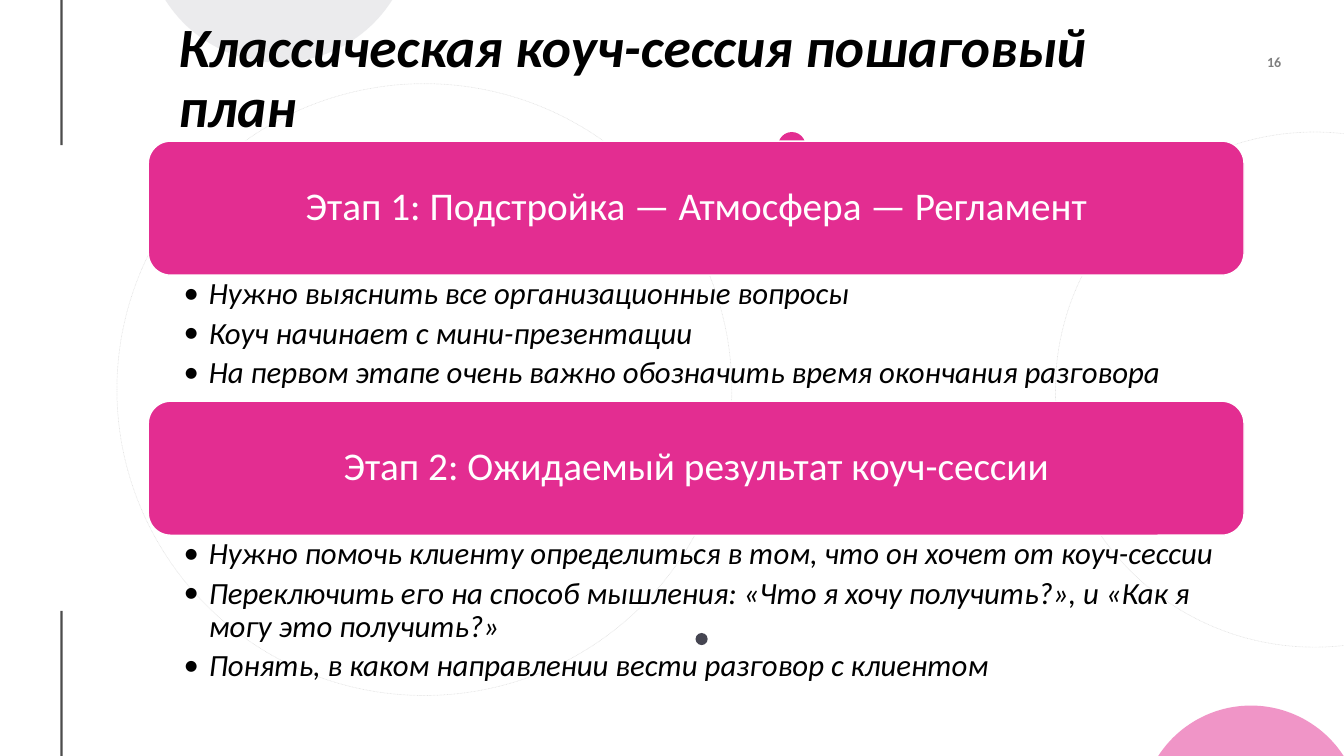
from dataclasses import dataclass
from math import asin, cos, sin

from lxml import etree
from pptx import Presentation
from pptx import util as u
from pptx.dml.color import RGBColor
from pptx.enum import dml, shapes, text
from pptx.oxml import ns

BLACK = RGBColor(0x00, 0x00, 0x00)
WHITE = RGBColor(0xFF, 0xFF, 0xFF)
PINK = RGBColor(0xE3, 0x2D, 0x91)
GREY = RGBColor(0xD8, 0xD9, 0xDC)
SLATE = RGBColor(0x45, 0x45, 0x51)
FONT = "Calibri"
WIDTH, HEIGHT = u.Inches(13.33), u.Inches(7.5)
RAIL_X = 4.58
STEP_LEFT, STEP_WIDTH, STEP_TOP, BAR_HEIGHT = 11.03, 81.53, 18.67, 17.73


@dataclass(frozen=True)
class Box:
    left: float
    top: float
    width: float
    height: float

    def emu(self) -> tuple[int, int, int, int]:
        return x(self.left), y(self.top), x(self.width), y(self.height)


@dataclass(frozen=True)
class Cap:
    center: float
    half_chord: float
    height: float
    edge: float
    direction: int
    color: RGBColor


@dataclass(frozen=True)
class Step:
    heading: str
    points: tuple[str, ...]
    height: float


RINGS = (Box(78.53, 17.47, 38.55, 68.13), Box(8.7, 11.07, 45.75, 80.93))
DOTS = ((Box(51.75, 83.73, 0.9, 1.6), SLATE), (Box(57.9, 17.47, 2.03, 3.6), PINK))
CAPS = (
    Cap(93.08, 6.9, 6.67, 100, -1, PINK),
    Cap(20.74, 8.44, 8.27, 0, 1, GREY),
)
STEPS = (
    Step(
        "Этап 1: Подстройка — Атмосфера — Регламент",
        (
            "Нужно выяснить все организационные вопросы",
            "Коуч начинает с мини-презентации",
            "На первом этапе очень важно обозначить время окончания разговора",
        ),
        16.67,
    ),
    Step(
        "Этап 2: Ожидаемый результат коуч-сессии",
        (
            "Нужно помочь клиенту определиться в том, что он хочет от коуч-сессии",
            "Переключить его на способ мышления: «Что я хочу получить?», и «Как я могу это получить?»",
            "Понять, в каком направлении вести разговор с клиентом",
        ),
        21.07,
    ),
)


def x(share: float) -> int:
    return round(WIDTH * share / 100)


def y(share: float) -> int:
    return round(HEIGHT * share / 100)


def set_alpha(element, percent: int) -> None:
    for color in element.iter(ns.qn("a:srgbClr")):
        etree.SubElement(color, ns.qn("a:alpha")).set("val", str(percent * 1000))


def style(font, size: float, color: RGBColor, bold: bool = False, italic: bool = False) -> None:
    font.name, font.size = FONT, u.Pt(size)
    font.bold, font.italic = bold, italic
    font.color.rgb = color


def set_frame(tf, anchor, left: float, top: float, right: float, bottom: float) -> None:
    tf.word_wrap = True
    tf.auto_size = text.MSO_AUTO_SIZE.NONE
    tf.vertical_anchor = anchor
    tf.margin_left, tf.margin_top = u.Inches(left), u.Inches(top)
    tf.margin_right, tf.margin_bottom = u.Inches(right), u.Inches(bottom)


def fill_plain(sp, color: RGBColor) -> None:
    sp.shadow.inherit = False
    sp.fill.solid()
    sp.fill.fore_color.rgb = color
    sp.line.fill.background()


def add_rail(slide, top: float, bottom: float) -> None:
    line = slide.shapes.add_connector(
        shapes.MSO_CONNECTOR.STRAIGHT, x(RAIL_X), y(top), x(RAIL_X), y(bottom)
    )
    line.line.color.rgb = BLACK
    line.line.width = u.Pt(1.5)
    set_alpha(line.element, 70)
    etree.SubElement(line.element.spPr, ns.qn("a:effectLst"))


def add_ring(slide, box: Box) -> None:
    sp = slide.shapes.add_shape(shapes.MSO_SHAPE.OVAL, *box.emu())
    sp.shadow.inherit = False
    sp.fill.background()
    sp.line.color.rgb = BLACK
    sp.line.width = u.Pt(0.5)
    sp.line.dash_style = dml.MSO_LINE.ROUND_DOT
    set_alpha(sp.element, 10)


def add_dot(slide, box: Box, color: RGBColor) -> None:
    fill_plain(slide.shapes.add_shape(shapes.MSO_SHAPE.OVAL, *box.emu()), color)


def add_cap(slide, cap: Cap, segments: int = 48) -> None:
    half, height = x(cap.half_chord), y(cap.height)
    radius = (half**2 + height**2) / (2 * height)
    reach = asin(half / radius)
    angles = [reach * (2 * i / segments - 1) for i in range(segments + 1)]
    points = [
        (
            round(x(cap.center) + radius * sin(a)),
            round(y(cap.edge) + cap.direction * (radius * cos(a) - radius + height)),
        )
        for a in angles
    ]
    builder = slide.shapes.build_freeform(*points[0])
    builder.add_line_segments(points[1:], close=True)
    sp = builder.convert_to_shape()
    fill_plain(sp, cap.color)
    set_alpha(sp.element, 50)


def add_number(slide) -> None:
    sp = slide.shapes.add_textbox(*Box(89.55, 6.4, 5.78, 3.6).emu())
    set_frame(sp.text_frame, text.MSO_ANCHOR.MIDDLE, 0, 0, 0, 0)
    p = sp.text_frame.paragraphs[0]
    p.text = "16"
    p.alignment = text.PP_ALIGN.RIGHT
    style(p.font, 10, BLACK, bold=True)
    set_alpha(sp.element, 50)


def add_title(slide) -> None:
    sp = slide.shapes.title
    slide.shapes.element.append(sp.element)
    sp.left, sp.top, sp.width, sp.height = Box(12.53, 7.73, 78.75, 5.47).emu()
    set_frame(sp.text_frame, text.MSO_ANCHOR.MIDDLE, 0.1, 0.05, 0.1, 0.05)
    p = sp.text_frame.paragraphs[0]
    p.text = "Классическая коуч-сессия пошаговый план"
    p.alignment = text.PP_ALIGN.LEFT
    p.line_spacing = 0.9
    style(p.font, 39.6, BLACK, bold=True, italic=True)


def add_step(slide, step: Step, top: float) -> None:
    bar = slide.shapes.add_shape(
        shapes.MSO_SHAPE.ROUNDED_RECTANGLE, *Box(STEP_LEFT, top, STEP_WIDTH, BAR_HEIGHT).emu()
    )
    fill_plain(bar, PINK)
    bar.line.color.rgb = WHITE
    bar.line.width = u.Pt(1)
    set_frame(bar.text_frame, text.MSO_ANCHOR.MIDDLE, 0.12, 0.12, 0.12, 0.12)
    p = bar.text_frame.paragraphs[0]
    p.text = step.heading
    p.alignment = text.PP_ALIGN.CENTER
    p.line_spacing = 0.9
    style(p.font, 28, WHITE)

    body = Box(STEP_LEFT, top + BAR_HEIGHT, STEP_WIDTH, step.height)
    tf = slide.shapes.add_textbox(*body.emu()).text_frame
    set_frame(tf, text.MSO_ANCHOR.TOP, 0.35, 0.03, 0.17, 0.03)
    for i, point in enumerate(step.points):
        p = tf.add_paragraph() if i else tf.paragraphs[0]
        p.text = point
        p.line_spacing = 0.9
        p.space_after = u.Pt(4.4)
        props = p._p.get_or_add_pPr()
        props.set("marL", str(u.Inches(0.25)))
        props.set("indent", str(u.Inches(-0.25)))
        etree.SubElement(props, ns.qn("a:buFont")).set("typeface", FONT)
        etree.SubElement(props, ns.qn("a:buChar")).set("char", "•")
        style(p.font, 22, BLACK, italic=True)


def main() -> None:
    prs = Presentation()
    prs.slide_width, prs.slide_height = WIDTH, HEIGHT
    slide = prs.slides.add_slide(prs.slide_layouts[5])
    add_rail(slide, 80.8, 100)
    add_number(slide)
    add_rail(slide, 0, 19.2)
    for ring in RINGS:
        add_ring(slide, ring)
    for box, color in DOTS:
        add_dot(slide, box, color)
    for cap in CAPS:
        add_cap(slide, cap)
    add_title(slide)
    top = STEP_TOP
    for step in STEPS:
        add_step(slide, step, top)
        top += BAR_HEIGHT + step.height
    prs.save("out.pptx")


if __name__ == "__main__":
    main()
